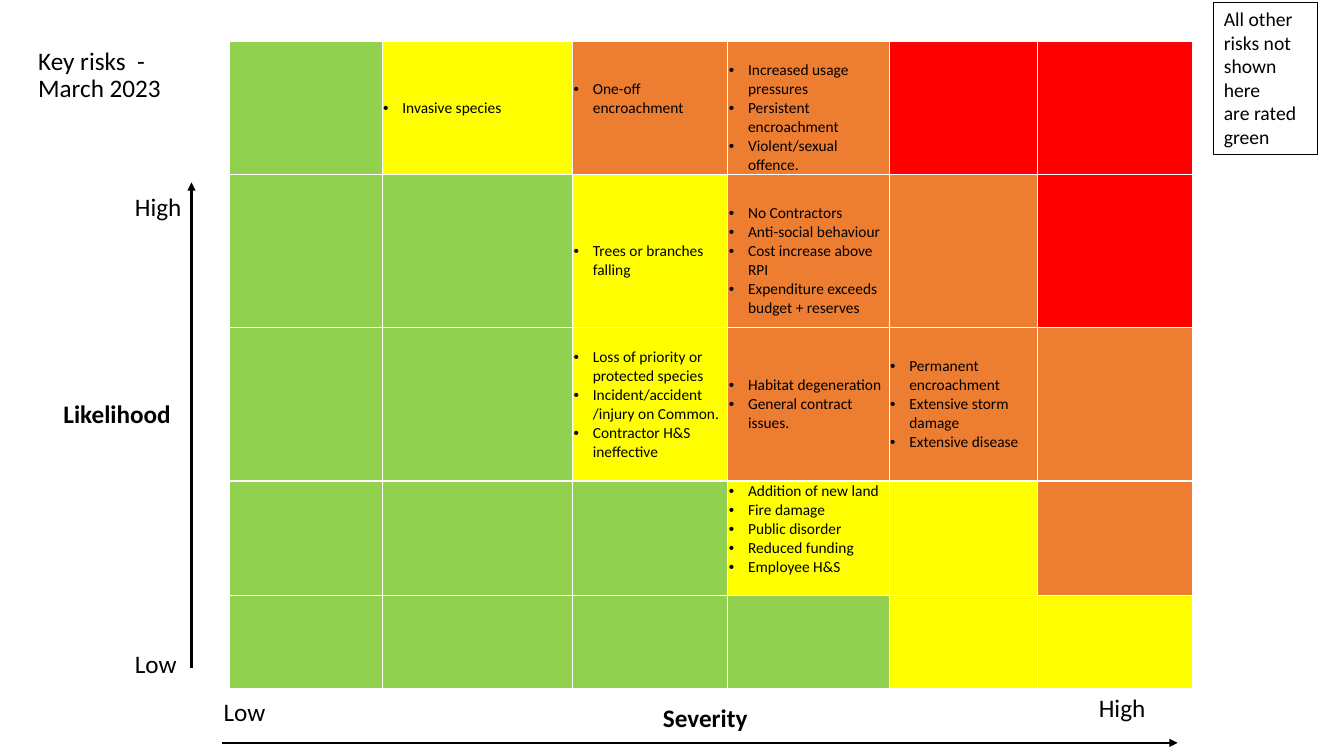
from lxml import etree
from pptx import Presentation
from pptx.dml.color import RGBColor
from pptx.enum.shapes import MSO_CONNECTOR, MSO_SHAPE
from pptx.enum.text import MSO_ANCHOR, PP_ALIGN
from pptx.oxml.ns import qn
from pptx.util import Inches, Pt

STRAIGHT, RECTANGLE = MSO_CONNECTOR.STRAIGHT, MSO_SHAPE.RECTANGLE
TOP, MIDDLE = MSO_ANCHOR.TOP, MSO_ANCHOR.MIDDLE
LEFT, CENTER = PP_ALIGN.LEFT, PP_ALIGN.CENTER

BLACK = RGBColor(0x00, 0x00, 0x00)
WHITE = RGBColor(0xFF, 0xFF, 0xFF)
RATINGS = {
    "G": RGBColor(0x92, 0xD0, 0x50),
    "Y": RGBColor(0xFF, 0xFF, 0x00),
    "O": RGBColor(0xED, 0x7D, 0x31),
    "R": RGBColor(0xFF, 0x00, 0x00),
}

# All places are percentages of the slide's width and height
WIDTH, HEIGHT = Inches(13.33), Inches(7.5)
MATRIX_LEFT, MATRIX_TOP = 17.1, 5.5
COLUMNS = [11.33, 14.18, 11.55, 12, 11.03, 11.55]
ROWS = [17.6, 20.2, 20.3, 15.2, 12.2]
RATING_ROWS = ["GYOORR", "GGYOOR", "GGYOOO", "GGGYYO", "GGGGYY"]

# (row, column): (risks, inset above, inset below) with insets in inches
LINE = 0.19
RISKS = {
    (0, 1): (["Invasive species"], 0, 0),
    (0, 2): (["One-off encroachment"], 0, LINE),
    (0, 3): (["Increased usage pressures", "Persistent encroachment",
              "Violent/sexual offence."], LINE, 0),
    (1, 2): (["Trees or branches falling"], LINE, 0),
    (1, 3): (["No Contractors", "Anti-social behaviour",
              "Cost increase above RPI",
              "Expenditure exceeds budget + reserves"], LINE, 0),
    (2, 2): (["Loss of priority or protected species",
              "Incident/accident /injury on Common.",
              "Contractor H&S ineffective"], 0, 0),
    (2, 3): (["Habitat degeneration", "General contract issues."], 0, 0),
    (2, 4): (["Permanent encroachment", "Extensive storm damage",
              "Extensive disease"], 0, 0),
    (3, 3): (["Addition of new land", "Fire damage", "Public disorder",
              "Reduced funding", "Employee H&S"], 0, LINE),
}

# Text, left, top, width, bold, alignment
AXIS_LABELS = [
    ("High", 81.02, 90.93, 7.65, False, LEFT),
    ("Severity", 39.01, 92.27, 26.93, True, CENTER),
    ("Likelihood", 3.98, 52, 26.93, True, LEFT),
    ("Low", 15.9, 91.47, 12, False, LEFT),
    ("Low", 9.3, 85.07, 12, False, LEFT),
    ("High", 9.3, 24.67, 12, False, LEFT),
]
LABEL_HEIGHT = 5.33


def across(share):
    return int(WIDTH * share / 100)


def down(share):
    return int(HEIGHT * share / 100)


def place(left, top, width, height):
    return across(left), down(top), across(width), down(height)


def apply(target, values):
    for name, value in values.items():
        setattr(target, name, value)


def write(frame, lines, size, bold=False, **paragraph_format):
    """Fill a text frame with one paragraph per line."""
    frame.word_wrap = True
    for index, line in enumerate(lines):
        para = frame.paragraphs[0] if index == 0 else frame.add_paragraph()
        apply(para, paragraph_format)
        span = para.add_run()
        span.text = line
        apply(span.font, {"name": "Calibri", "size": Pt(size), "bold": bold})
        span.font.color.rgb = BLACK


def add_label(page, lines, area, **text_format):
    box = page.shapes.add_textbox(*place(*area))
    write(box.text_frame, lines, 18, **text_format)


def add_note(page, lines, area):
    box = page.shapes.add_shape(RECTANGLE, *place(*area))
    box.shadow.inherit = False
    box.fill.background()
    box.line.color.rgb = BLACK
    box.line.width = Pt(0.75)
    box.text_frame.vertical_anchor = TOP
    write(box.text_frame, lines, 14, alignment=LEFT)


def add_arrow(page, start, end):
    arrow = page.shapes.add_connector(
        STRAIGHT, across(start[0]), down(start[1]), across(end[0]), down(end[1]))
    arrow.line.color.rgb = BLACK
    arrow.line.width = Pt(1.5)
    outline = arrow.line._get_or_add_ln()
    etree.SubElement(outline, qn("a:tailEnd"), type="triangle")
    etree.SubElement(arrow._element.spPr, qn("a:effectLst"))


def add_borders(cell):
    properties = cell._tc.get_or_add_tcPr()
    for index, side in enumerate(("a:lnL", "a:lnR", "a:lnT", "a:lnB")):
        border = etree.Element(qn(side), w=str(Pt(1)))
        fill = etree.SubElement(border, qn("a:solidFill"))
        etree.SubElement(fill, qn("a:srgbClr"), val=str(WHITE))
        properties.insert(index, border)


def add_bullets(frame):
    for para in frame.paragraphs:
        properties = para._p.get_or_add_pPr()
        properties.set("marL", str(Inches(LINE)))
        properties.set("indent", str(-Inches(LINE)))
        etree.SubElement(properties, qn("a:buFont"), typeface="Arial")
        etree.SubElement(properties, qn("a:buChar"), char="•")


def fill_cell(cell, risks, above, below):
    apply(cell, {
        "vertical_anchor": MIDDLE,
        "margin_left": Inches(0.01),
        "margin_right": Inches(0.01),
        "margin_top": Inches(above),
        "margin_bottom": Inches(below),
    })
    write(cell.text_frame, risks, 11)
    add_bullets(cell.text_frame)


def add_matrix(page):
    area = place(MATRIX_LEFT, MATRIX_TOP, sum(COLUMNS), sum(ROWS))
    table = page.shapes.add_table(len(ROWS), len(COLUMNS), *area).table
    for column, share in zip(table.columns, COLUMNS):
        column.width = across(share)
    for row, share in zip(table.rows, ROWS):
        row.height = down(share)
    for r, ratings in enumerate(RATING_ROWS):
        for c, rating in enumerate(ratings):
            cell = table.cell(r, c)
            cell.fill.solid()
            cell.fill.fore_color.rgb = RATINGS[rating]
            add_borders(cell)
            if (r, c) in RISKS:
                fill_cell(cell, *RISKS[r, c])


def main():
    deck = Presentation()
    deck.slide_width, deck.slide_height = WIDTH, HEIGHT
    page = deck.slides.add_slide(deck.slide_layouts[6])

    # Risk matrix and title
    add_matrix(page)
    add_label(page, ["Key risks  - March 2023"], (2.1, 5.73, 12.23, 15.47),
              line_spacing=0.9, space_before=Pt(10))

    # Severity and likelihood axes
    add_arrow(page, (16.5, 98.27), (87.62, 98.27))
    add_arrow(page, (14.25, 88.4), (14.25, 24.13))
    for text, left, top, width, bold, alignment in AXIS_LABELS:
        add_label(page, [text], (left, top, width, LABEL_HEIGHT),
                  bold=bold, alignment=alignment)

    # Note on the remaining risks
    add_note(page, ["All other risks not shown here", "are rated green"],
             (90.32, 0.27, 7.73, 20.13))

    deck.save("out.pptx")


if __name__ == "__main__":
    main()
